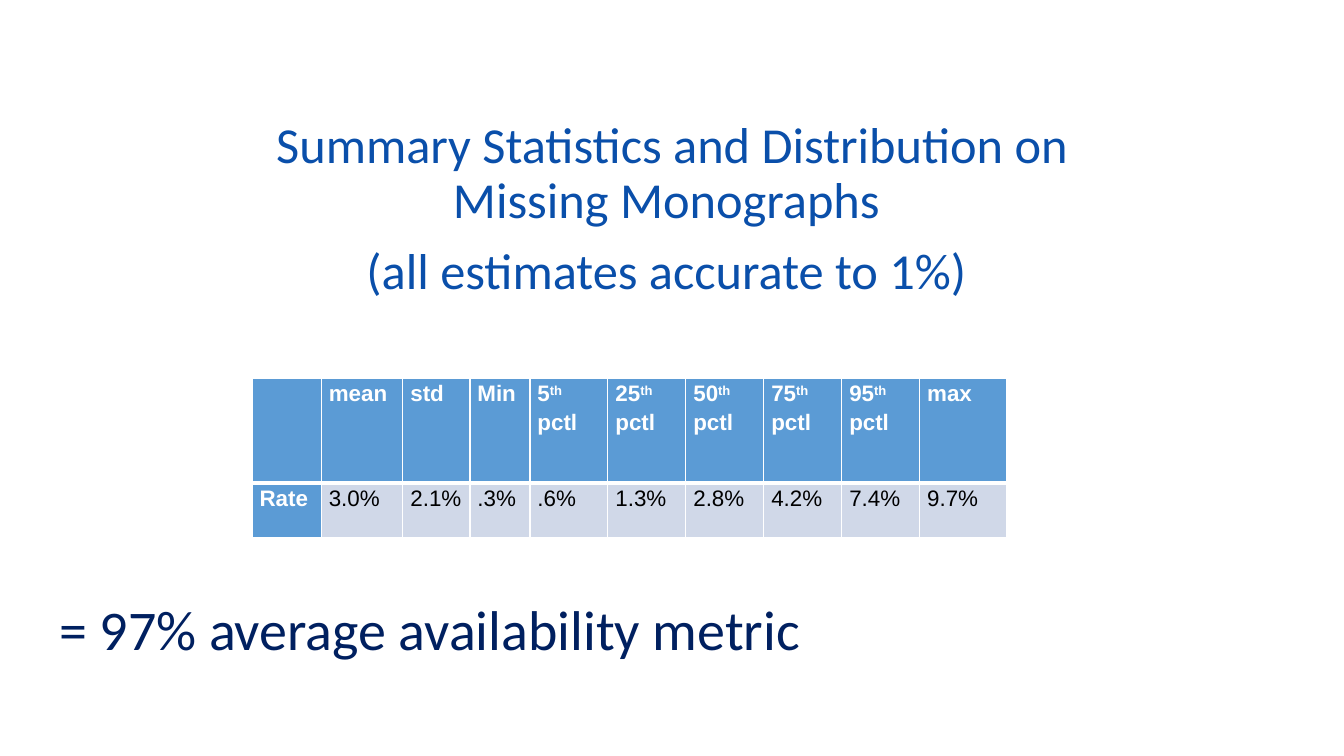
from dataclasses import dataclass

from lxml.etree import SubElement
from pptx import Presentation
from pptx.dml.color import RGBColor
from pptx.enum.text import MSO_AUTO_SIZE, PP_ALIGN
from pptx.oxml.ns import qn
from pptx.slide import Slide
from pptx.table import _Cell
from pptx.util import Pt

WHITE = RGBColor(0xFF, 0xFF, 0xFF)
BLACK = RGBColor(0x00, 0x00, 0x00)
TITLE_BLUE = RGBColor(0x0A, 0x4F, 0xAA)
NAVY = RGBColor(0x00, 0x20, 0x60)
HEADER_BLUE = RGBColor(0x5B, 0x9B, 0xD5)
BODY_GREY = RGBColor(0xD0, 0xD8, 0xE8)

TITLE_LINES = (
    "Summary Statistics and Distribution on Missing Monographs ",
    "(all estimates accurate to 1%) ",
)


@dataclass(frozen=True)
class Statistic:
    label: str
    rate: str
    width: float
    is_percentile: bool = False


PERCENTILE_WIDTH = 55.7
STATISTICS = (
    Statistic("", "Rate", 49.5),
    Statistic("mean", "3.0%", 58.3),
    Statistic("std", "2.1%", 47.9),
    Statistic("Min", ".3%", 42.9),
    Statistic("5", ".6%", PERCENTILE_WIDTH, True),
    Statistic("25", "1.3%", PERCENTILE_WIDTH, True),
    Statistic("50", "2.8%", PERCENTILE_WIDTH, True),
    Statistic("75", "4.2%", PERCENTILE_WIDTH, True),
    Statistic("95", "7.4%", PERCENTILE_WIDTH, True),
    Statistic("max", "9.7%", 61.9),
)
ROW_HEIGHTS = (75, 39)


def add_run(p, text: str, font: str, size: float, color: RGBColor,
            bold: bool = False, superscript: bool = False) -> None:
    r = p.add_run()
    r.text = text
    r.font.name = font
    r.font.size = Pt(size)
    r.font.color.rgb = color
    r.font.bold = bold
    if superscript:
        r.font._element.set("baseline", "30000")


def add_title(s: Slide) -> None:
    tf = s.shapes.add_textbox(Pt(136), Pt(40.3), Pt(688.3), Pt(300.2)).text_frame
    tf.word_wrap = True
    tf.margin_left = tf.margin_right = tf.margin_bottom = Pt(7.2)
    tf.margin_top = Pt(45.6)
    for i, line in enumerate(TITLE_LINES):
        p = tf.add_paragraph() if i else tf.paragraphs[0]
        p.alignment = PP_ALIGN.CENTER
        p.line_spacing = 0.9
        p.space_before = Pt(12 if i else 0)
        add_run(p, line, "Calibri", 36, TITLE_BLUE)


def set_borders(cell: _Cell, widths: dict[str, float]) -> None:
    """Draw white borders, placed before the fill as the schema requires."""
    tc_pr = cell._tc.get_or_add_tcPr()
    for i, (side, width) in enumerate(widths.items()):
        ln = SubElement(tc_pr, qn(f"a:ln{side}"), w=str(Pt(width)))
        fill = SubElement(ln, qn("a:solidFill"))
        SubElement(fill, qn("a:srgbClr"), val=str(WHITE))
        tc_pr.insert(i, ln)


def style_cell(cell: _Cell, is_header: bool, is_top: bool) -> None:
    cell.margin_left = cell.margin_right = Pt(5.4)
    cell.margin_top = cell.margin_bottom = Pt(0)
    cell.fill.solid()
    cell.fill.fore_color.rgb = HEADER_BLUE if is_header else BODY_GREY
    set_borders(cell, {"L": 1, "R": 1, "T": 1 if is_top else 3,
                       "B": 3 if is_top else 1})
    cell.text_frame.paragraphs[0].line_spacing = 1.15


def add_statistics_table(s: Slide) -> None:
    width = sum(stat.width for stat in STATISTICS)
    table = s.shapes.add_table(len(ROW_HEIGHTS), len(STATISTICS), Pt(180), Pt(270),
                               Pt(width), Pt(sum(ROW_HEIGHTS))).table
    for row, height in zip(table.rows, ROW_HEIGHTS):
        row.height = Pt(height)
    for col, stat in enumerate(STATISTICS):
        table.columns[col].width = Pt(stat.width)
        for row, text in enumerate((stat.label, stat.rate)):
            is_top = row == 0
            is_header = is_top or col == 0
            color = WHITE if is_header else BLACK
            cell = table.cell(row, col)
            style_cell(cell, is_header, is_top)
            p = cell.text_frame.paragraphs[0]
            if text:
                add_run(p, text, "Arial", 16, color, is_header)
            if is_top and stat.is_percentile:
                add_run(p, "th", "Arial", 16, color, True, superscript=True)
                add_run(p, " pctl", "Arial", 16, color, True)


def add_conclusion(s: Slide) -> None:
    tf = s.shapes.add_textbox(Pt(35.3), Pt(421.2), Pt(557.3), Pt(55.4)).text_frame
    tf.word_wrap = False
    tf.auto_size = MSO_AUTO_SIZE.SHAPE_TO_FIT_TEXT
    add_run(tf.paragraphs[0], "= 97% average availability metric", "Calibri", 40, NAVY)


def main() -> None:
    prs = Presentation()
    prs.slide_width, prs.slide_height = Pt(960), Pt(540)
    s = prs.slides.add_slide(prs.slide_layouts[6])
    add_title(s)
    add_statistics_table(s)
    add_conclusion(s)
    prs.save("out.pptx")


if __name__ == "__main__":
    main()
